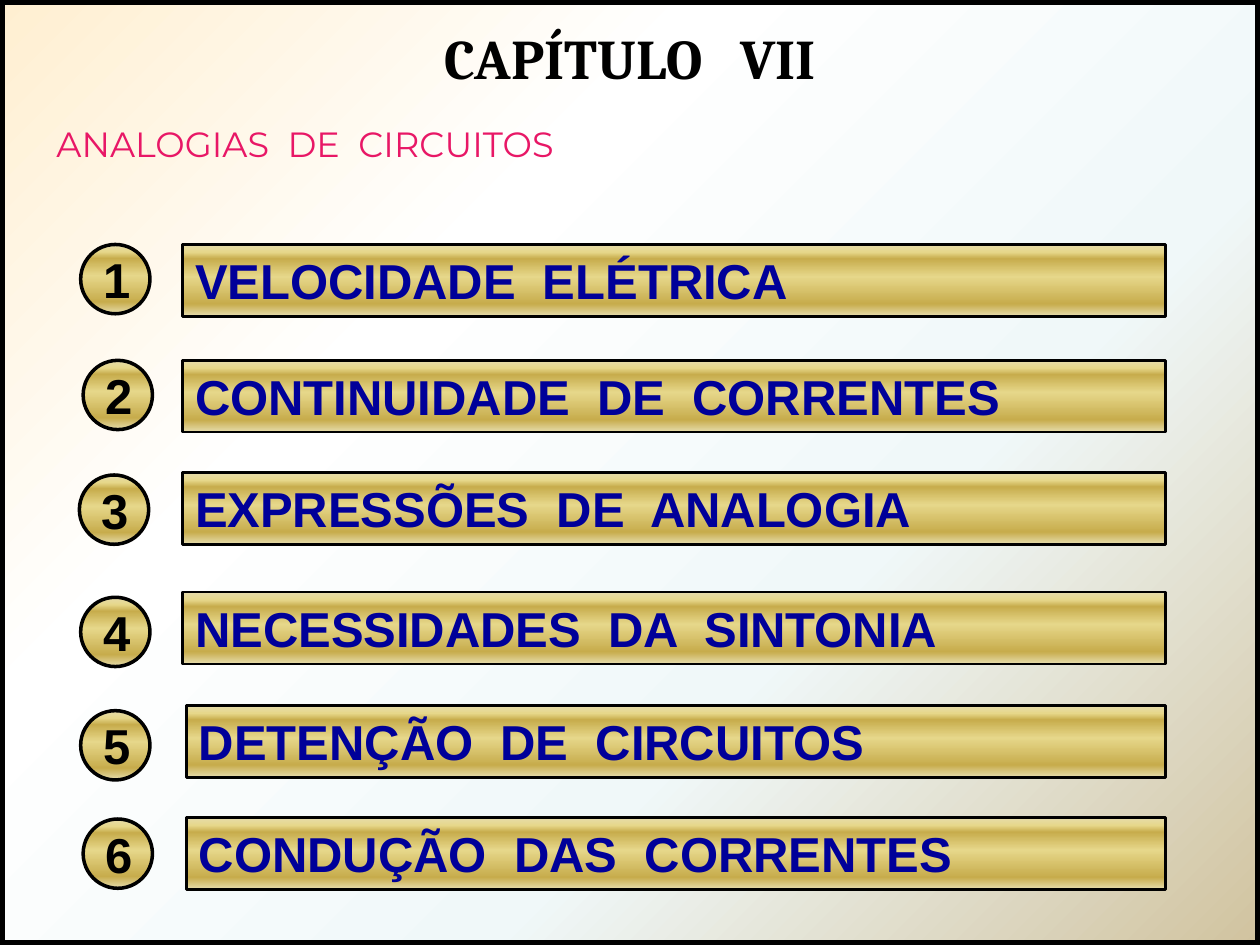
"""Build the chapter VII contents slide with six numbered gold bars."""
import dataclasses

import lxml.etree
import pptx
import pptx.dml.color
import pptx.enum.shapes
import pptx.enum.text
import pptx.oxml.ns
import pptx.util

Inches = pptx.util.Inches
Shape = pptx.enum.shapes.MSO_SHAPE
Align = pptx.enum.text.PP_ALIGN
Anchor = pptx.enum.text.MSO_ANCHOR
Fit = pptx.enum.text.MSO_AUTO_SIZE
qn = pptx.oxml.ns.qn


@dataclasses.dataclass(frozen=True)
class Theme:
    ink: str = "000000"
    topic: str = "000099"
    accent: str = "E81766"
    title_size: int = 32
    subtitle_size: int = 20
    topic_size: int = 28
    title_font: str = "Cambria"
    subtitle_font: str = "Montserrat"
    topic_font: str = "Arial"
    paper: tuple = ((0, "FFEFD1", 100), (32, "FFFFFF", 73),
                    (65, "F0F8F9", 62), (100, "D1C39F", 100))
    gold: tuple = ((0, "E6DCAC", 100), (11, "E6D78A", 100), (20, "C7AC4C", 100),
                   (45, "E6D78A", 100), (83, "C7AC4C", 100), (100, "E6DCAC", 100))


theme = Theme()


def paint_gradient(fill, element, stops, angle):
    fill.gradient()
    gradient = element.find(".//" + qn("a:gradFill"))
    stop_list = gradient.find(qn("a:gsLst"))
    for stop in list(stop_list):
        stop_list.remove(stop)
    for position, color, opacity in stops:
        stop = lxml.etree.SubElement(stop_list, qn("a:gs"), pos=str(position * 1000))
        tint = lxml.etree.SubElement(stop, qn("a:srgbClr"), val=color)
        if opacity < 100:
            lxml.etree.SubElement(tint, qn("a:alpha"), val=str(opacity * 1000))
    gradient.find(qn("a:lin")).set("ang", str(angle * 60000))


def write_text(box, text, *, font, size, color, bold=True, align=Align.LEFT,
               anchor=Anchor.TOP, fit=Fit.SHAPE_TO_FIT_TEXT, wrap=True):
    frame = box.text_frame
    frame.word_wrap = wrap
    frame.auto_size = fit
    frame.vertical_anchor = anchor
    para = frame.paragraphs[0]
    para.alignment = align
    span = para.add_run()
    span.text = text
    span.font.name = font
    span.font.size = pptx.util.Pt(size)
    span.font.bold = bold
    span.font.color.rgb = pptx.dml.color.RGBColor.from_string(color)


deck = pptx.Presentation()
deck.slide_width, deck.slide_height = Inches(10), Inches(7.5)
page = deck.slides.add_slide(deck.slide_layouts[5])
paint_gradient(page.background.fill, page.element, theme.paper, 45)

title = page.shapes.title
title.left, title.top = Inches(0.12), Inches(0.14)
title.width, title.height = Inches(9.76), Inches(0.64)
write_text(title, "CAPÍTULO   VII", font=theme.title_font, size=theme.title_size,
           color=theme.ink, align=Align.CENTER)

subtitle = page.shapes.add_textbox(Inches(0.35), Inches(0.92), Inches(9.37), Inches(0.71))
write_text(subtitle, "ANALOGIAS  DE  CIRCUITOS", font=theme.subtitle_font,
           size=theme.subtitle_size, color=theme.accent, bold=False,
           fit=Fit.NONE, wrap=False)

border = page.shapes.add_shape(Shape.RECTANGLE, 0, 0, deck.slide_width, deck.slide_height)
border.shadow.inherit = False
border.fill.background()
border.line.color.rgb = pptx.dml.color.RGBColor.from_string(theme.ink)
border.line.width = pptx.util.Pt(6)

bar_right = 9.25
topics = [
    ("VELOCIDADE  ELÉTRICA", 1.45, 1.94, 0.64, 1.94),
    ("CONTINUIDADE  DE  CORRENTES", 1.45, 2.86, 0.66, 2.86),
    ("EXPRESSÕES  DE  ANALOGIA", 1.45, 3.75, 0.63, 3.77),
    ("NECESSIDADES  DA  SINTONIA", 1.45, 4.7, 0.64, 4.74),
    ("DETENÇÃO  DE  CIRCUITOS", 1.48, 5.6, 0.64, 5.64),
    ("CONDUÇÃO  DAS  CORRENTES", 1.48, 6.49, 0.66, 6.5),
]
for number, (topic, bar_left, bar_top, badge_left, badge_top) in enumerate(topics, 1):
    bar = page.shapes.add_shape(Shape.RECTANGLE, Inches(bar_left), Inches(bar_top),
                                Inches(bar_right - bar_left), Inches(0.57))
    badge = page.shapes.add_shape(Shape.OVAL, Inches(badge_left), Inches(badge_top),
                                  Inches(0.55), Inches(0.55))
    for shape, line_width in ((bar, 1.5), (badge, 2)):
        shape.shadow.inherit = False
        paint_gradient(shape.fill, shape.element, theme.gold, 90)
        shape.line.color.rgb = pptx.dml.color.RGBColor.from_string(theme.ink)
        shape.line.width = pptx.util.Pt(line_width)
    write_text(bar, topic, font=theme.topic_font, size=theme.topic_size, color=theme.topic)
    write_text(badge, str(number), font=theme.topic_font, size=theme.topic_size,
               color=theme.ink, align=Align.CENTER, anchor=Anchor.MIDDLE, fit=Fit.NONE)

deck.save("out.pptx")
